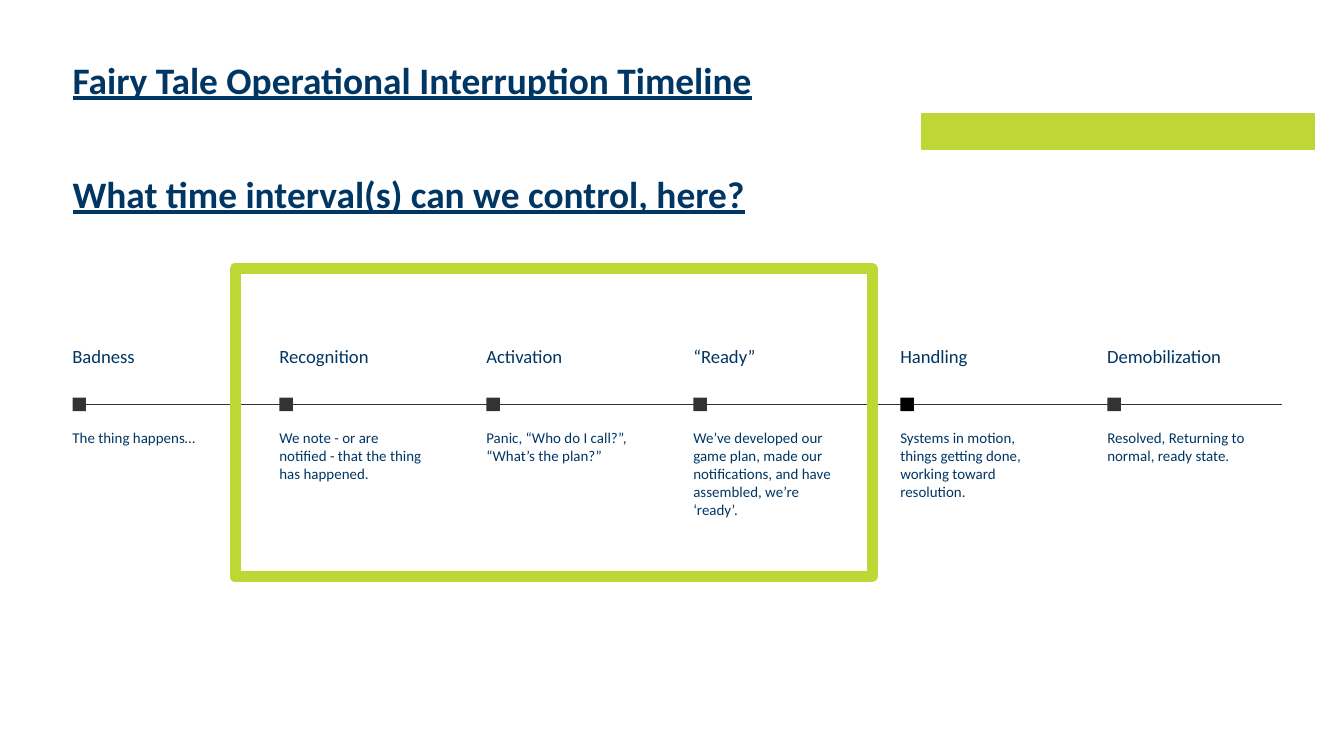
from dataclasses import dataclass

from lxml import etree
from pptx import Presentation
from pptx import util as u
from pptx.dml.color import RGBColor
from pptx.enum import shapes, text
from pptx.oxml import ns

SLIDE_WIDTH, SLIDE_HEIGHT = 10, 5.625
NAVY, LIME, CHARCOAL, BLACK = "003663", "BFD735", "333333", "000000"
FONT = "Calibri"

# Timeline grid: one column per milestone, three rows
FIRST_COLUMN, COLUMN_PITCH = 0.54, 1.54
HEADING_ROW, MARKER_ROW, DETAIL_ROW = 2.52, 2.96, 3.14
MARKER_SIZE = 0.1
INSET_X, INSET_Y = 0.1, 0.05
DETAIL_WIDTH = 1.31
LINE_HEIGHT = 0.133


@dataclass(frozen=True)
class Box:
    left: float
    top: float
    width: float
    height: float

    def emu(self) -> tuple:
        return tuple(u.Inches(n) for n in (self.left, self.top, self.width, self.height))


@dataclass(frozen=True)
class Milestone:
    heading: str
    heading_width: float
    detail: str
    detail_lines: int
    marker_color: str = CHARCOAL


MILESTONES = [
    Milestone("Badness", 0.79, "The thing happens…", 1),
    Milestone("Recognition", 1.03,
              "We note - or are notified - that the thing has happened.", 3),
    Milestone("Activation", 0.98, "Panic, “Who do I call?”, “What’s the plan?”", 2),
    Milestone("“Ready”", 0.79,
              "We’ve developed our game plan, made our notifications, "
              "and have assembled, we’re ‘ready’.", 5),
    Milestone("Handling", 0.79,
              "Systems in motion, things getting done, working toward resolution.",
              4, BLACK),
    Milestone("Demobilization", 1.16, "Resolved, Returning to normal, ready state.", 2),
]


def color(hex_code: str) -> RGBColor:
    return RGBColor.from_string(hex_code)


def add_text(slide, box: Box, wording: str, size: float,
             insets: tuple = (INSET_X, INSET_Y, INSET_X, INSET_Y),
             is_title: bool = False) -> None:
    frame = slide.shapes.add_textbox(*box.emu()).text_frame
    frame.word_wrap = True
    frame.vertical_anchor = text.MSO_ANCHOR.TOP
    (frame.margin_left, frame.margin_top,
     frame.margin_right, frame.margin_bottom) = (u.Inches(n) for n in insets)
    paragraph = frame.paragraphs[0]
    paragraph.text = wording
    font = paragraph.font
    font.name, font.size, font.color.rgb = FONT, u.Pt(size), color(NAVY)
    if is_title:
        font.bold = font.underline = True
        paragraph.line_spacing = 0.9


def add_rectangle(slide, box: Box, fill: str | None = None,
                  outline: str | None = None, weight: float = 0.75):
    rectangle = slide.shapes.add_shape(shapes.MSO_SHAPE.RECTANGLE, *box.emu())
    rectangle.shadow.inherit = False
    if fill:
        rectangle.fill.solid()
        rectangle.fill.fore_color.rgb = color(fill)
    else:
        rectangle.fill.background()
    if outline:
        rectangle.line.color.rgb = color(outline)
        rectangle.line.width = u.Pt(weight)
    else:
        rectangle.line.fill.background()
    return rectangle


def add_axis(slide, first_marker) -> None:
    """Draw the timeline from the first marker's right side."""
    middle = u.Inches(MARKER_ROW + MARKER_SIZE / 2)
    axis = slide.shapes.add_connector(
        shapes.MSO_CONNECTOR.STRAIGHT,
        u.Inches(FIRST_COLUMN + MARKER_SIZE), middle, u.Inches(9.54), middle)
    axis.begin_connect(first_marker, 3)
    axis.line.color.rgb = color(CHARCOAL)
    axis.line.width = u.Pt(1)
    etree.SubElement(axis._element.spPr, ns.qn("a:effectLst"))


def add_milestone(slide, column: int, milestone: Milestone):
    """Draw one column of the timeline and return its marker."""
    left = FIRST_COLUMN + column * COLUMN_PITCH
    marker = add_rectangle(slide, Box(left, MARKER_ROW, MARKER_SIZE, MARKER_SIZE),
                           milestone.marker_color)
    text_left = left - INSET_X
    add_text(slide, Box(text_left, HEADING_ROW, milestone.heading_width, 0.27),
             milestone.heading, 10)
    detail_height = 2 * INSET_Y + milestone.detail_lines * LINE_HEIGHT
    add_text(slide, Box(text_left, DETAIL_ROW, DETAIL_WIDTH, detail_height),
             milestone.detail, 8)
    return marker


def main() -> None:
    deck = Presentation()
    deck.slide_width, deck.slide_height = u.Inches(SLIDE_WIDTH), u.Inches(SLIDE_HEIGHT)
    slide = deck.slides.add_slide(deck.slide_layouts[6])

    add_text(slide, Box(FIRST_COLUMN, 0.46, 5.46, 0.56),
             "Fairy Tale Operational Interruption Timeline", 20, (0, 0, 0, 0), True)
    add_text(slide, Box(FIRST_COLUMN, 1.26, 5.26, 0.47),
             "What time interval(s) can we control, here?", 20,
             (0, INSET_Y, INSET_X, INSET_Y), True)

    for column, milestone in enumerate(MILESTONES):
        marker = add_milestone(slide, column, milestone)
        if column == 0:
            add_axis(slide, marker)

    add_rectangle(slide, Box(1.75, 2, 4.74, 2.29), outline=LIME, weight=6)
    add_rectangle(slide, Box(6.86, 0.85, 2.92, 0.26), fill=LIME, outline=LIME)

    deck.save("out.pptx")


if __name__ == "__main__":
    main()
